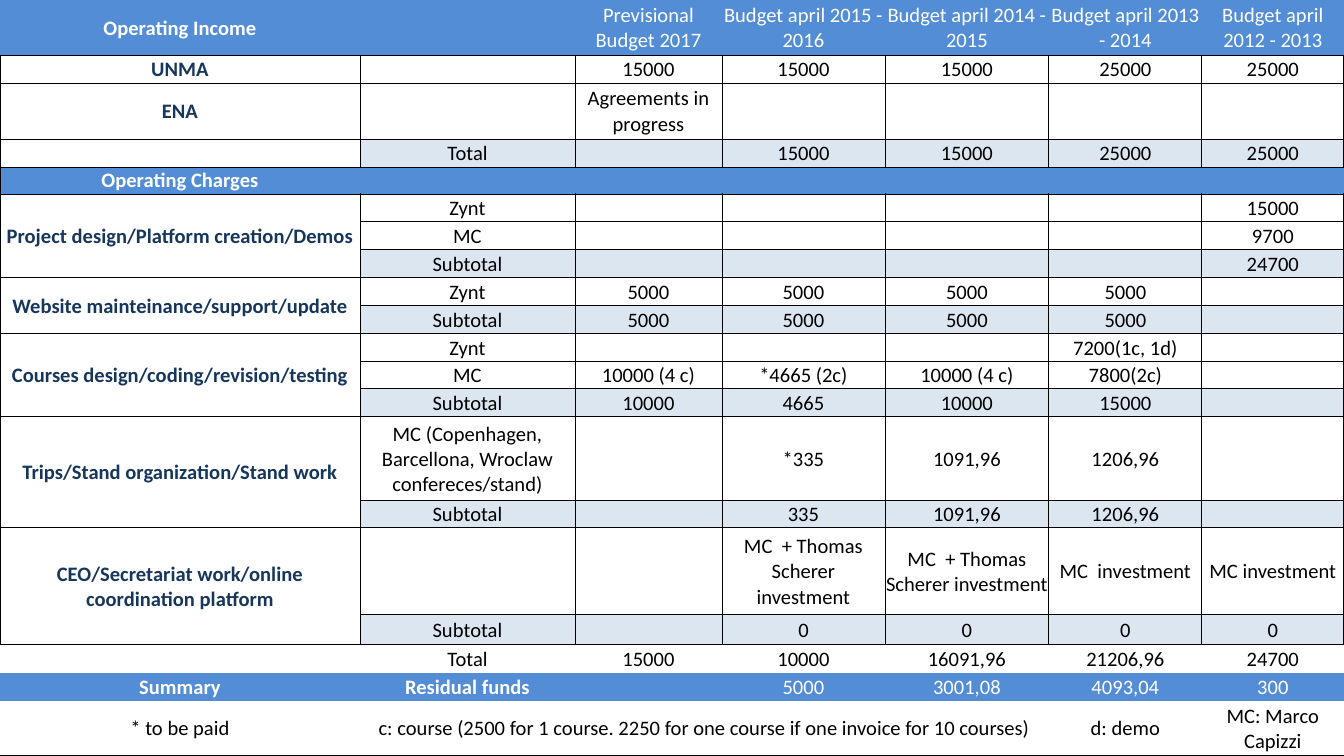
from lxml import etree
from pptx import Presentation
from pptx.dml.color import RGBColor
from pptx.enum.text import MSO_ANCHOR, PP_ALIGN
from pptx.oxml.ns import qn
from pptx.util import Pt

CENTER, MIDDLE = PP_ALIGN.CENTER, MSO_ANCHOR.MIDDLE
PX = 9144000 / 1344
WIDE, HIGH = 1344, 756
FONT, SIZE = "Calibri", 11
HEX = {"blue": "538DD5", "pale": "DCE6F1", "navy": "16365C",
       "white": "FFFFFF", "black": "000000"}

COLS = [360, 215, 147, 163, 164, 153, 142]

# Row kind: fill, borders, text colour, bold columns, first cell colour
KINDS = {
    "head": ("blue", "B", "white", [0], "white"),
    "band": ("blue", "TB", "white", [0], "white"),
    "item": (None, "LRTB", "black", [0], "navy"),
    "sub": ("pale", "LRTB", "black", [0], "navy"),
    "total": (None, "T", "black", [], "black"),
    "sum": ("blue", "", "white", [0, 1], "white"),
    "note": (None, "B", "black", [], "black"),
}

# Kind, height, cell texts
ROWS = [
    ("head", 55, ["Operating Income", "", "Previsional Budget 2017",
                  "Budget april 2015 - 2016", "Budget april 2014 - 2015",
                  "Budget april 2013 - 2014", "Budget april 2012 - 2013"]),
    ("item", 28, ["UNMA", "", "15000", "15000", "15000", "25000", "25000"]),
    ("item", 56, ["ENA", "", "Agreements in progress", "", "", "", ""]),
    ("sub", 28, ["", "Total", "", "15000", "15000", "25000", "25000"]),
    ("band", 27, ["Operating Charges", "", "", "", "", "", ""]),
    ("item", 28, ["Project design/Platform creation/Demos",
                  "Zynt", "", "", "", "", "15000"]),
    ("item", 28, ["", "MC", "", "", "", "", "9700"]),
    ("sub", 28, ["", "Subtotal", "", "", "", "", "24700"]),
    ("item", 28, ["Website mainteinance/support/update",
                  "Zynt", "5000", "5000", "5000", "5000", ""]),
    ("sub", 28, ["", "Subtotal", "5000", "5000", "5000", "5000", ""]),
    ("item", 28, ["Courses design/coding/revision/testing",
                  "Zynt", "", "", "", "7200(1c, 1d)", ""]),
    ("item", 27, ["", "MC", "10000 (4 c)", "*4665 (2c)", "10000 (4 c)",
                  "7800(2c)", ""]),
    ("sub", 28, ["", "Subtotal", "10000", "4665", "10000", "15000", ""]),
    ("item", 84, ["Trips/Stand organization/Stand work",
                  "MC (Copenhagen, Barcellona, Wroclaw confereces/stand)",
                  "", "*335", "1091,96", "1206,96", ""]),
    ("sub", 27, ["", "Subtotal", "", "335", "1091,96", "1206,96", ""]),
    ("item", 87, ["CEO/Secretariat work/online coordination platform", "", "",
                  "MC  + Thomas Scherer investment",
                  "MC  + Thomas Scherer investment",
                  "MC  investment", "MC investment"]),
    ("sub", 30, ["", "Subtotal", "", "0", "0", "0", "0"]),
    ("total", 28, ["", "Total", "15000", "10000", "16091,96", "21206,96",
                   "24700"]),
    ("sum", 28, ["Summary", "Residual funds", "", "5000", "3001,08",
                 "4093,04", "300"]),
    ("note", 55, ["* to be paid",
                  "c: course (2500 for 1 course. 2250 for one course if one "
                  "invoice for 10 courses)",
                  "", "", "", "d: demo", "MC: Marco Capizzi"]),
]

# First cell and last cell of each merge, as (row, column)
MERGES = [((5, 0), (7, 0)), ((8, 0), (9, 0)), ((10, 0), (12, 0)),
          ((13, 0), (14, 0)), ((15, 0), (16, 0)), ((19, 1), (19, 4))]


def emu(px):
    return round(px * PX)


def rgb(name):
    return RGBColor.from_string(HEX[name])


def edge(cell, sides):
    props = cell._tc.get_or_add_tcPr()
    for side in "LRTB":
        line = etree.SubElement(props, qn("a:ln" + side), w=str(Pt(0.5)))
        if side in sides:
            fill = etree.SubElement(line, qn("a:solidFill"))
            etree.SubElement(fill, qn("a:srgbClr"), val=HEX["black"])
        else:
            etree.SubElement(line, qn("a:noFill"))


def write(cell, text, color, bold):
    cell.margin_left = cell.margin_right = cell.margin_top = emu(1)
    cell.margin_bottom = 0
    cell.vertical_anchor = MIDDLE
    para = cell.text_frame.paragraphs[0]
    para.alignment = CENTER
    if text:
        run = para.add_run()
        run.text = text
        font = run.font
        font.name, font.size, font.bold = FONT, Pt(SIZE), bold
        font.color.rgb = rgb(color)
    else:
        # Small end mark keeps empty cells from stretching the row
        etree.SubElement(para._p, qn("a:endParaRPr"), sz=str(SIZE * 100))


deck = Presentation()
deck.slide_width, deck.slide_height = emu(WIDE), emu(HIGH)
slide = deck.slides.add_slide(deck.slide_layouts[6])

# Budget table
table = slide.shapes.add_table(len(ROWS), len(COLS), 0, 0,
                               emu(WIDE), emu(HIGH)).table
table.first_row = table.horz_banding = False
for col, width in zip(table.columns, COLS):
    col.width = emu(width)

for r, (kind, height, texts) in enumerate(ROWS):
    table.rows[r].height = emu(height)
    fill, sides, color, bolds, first = KINDS[kind]
    for c, text in enumerate(texts):
        cell = table.cell(r, c)
        edge(cell, sides + "L" if kind == "band" and c == 0 else sides)
        if fill and not (kind == "sub" and c == 0):
            cell.fill.solid()
            cell.fill.fore_color.rgb = rgb(fill)
        else:
            cell.fill.background()
        write(cell, text, color if c else first, c in bolds)

for start, end in MERGES:
    table.cell(*start).merge(table.cell(*end))

deck.save("out.pptx")
